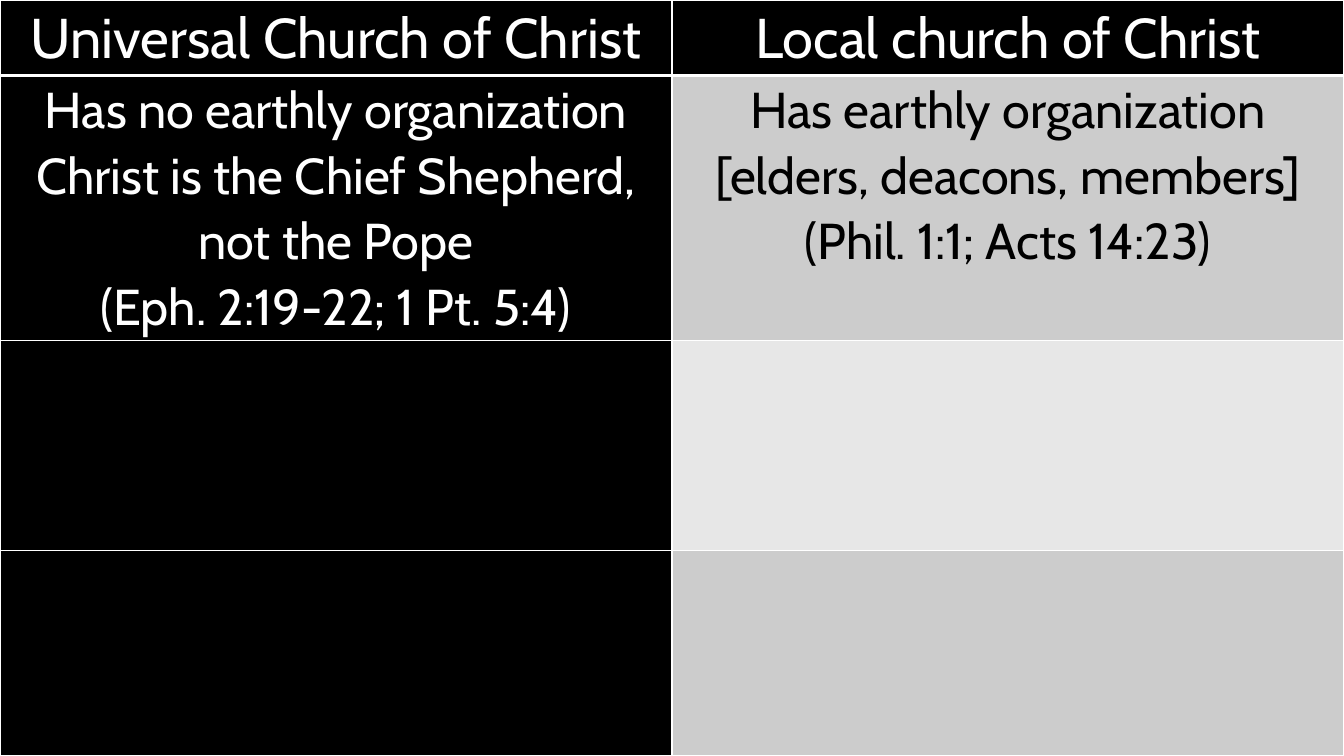
import dataclasses

import pptx
import pptx.dml.color
import pptx.enum.text
import pptx.oxml
import pptx.oxml.ns
import pptx.util
from pptx.util import Inches


@dataclasses.dataclass(frozen=True)
class Theme:
    font: str = "Cabin"
    black: str = "000000"
    white: str = "FFFFFF"
    gray: str = "CCCCCC"
    light_gray: str = "E7E7E7"
    heading_size: int = 40
    body_size: int = 36
    line_spacing: float = 1.07
    thin_border: int = 1
    heading_border: int = 3


THEME = Theme()
ROW_HEIGHTS = (0.75, 2.63, 2.09, 2.04)
RIGHT_FILLS = (THEME.black, THEME.gray, THEME.light_gray, THEME.gray)
COMPARISON = (
    (["Universal Church of Christ"], ["Local church of Christ"]),
    (
        [
            "Has no earthly organization Christ is the Chief Shepherd, not the Pope",
            "(Eph. 2:19-22; 1 Pt. 5:4)",
        ],
        [
            "Has earthly organization",
            "[elders, deacons, members]",
            "(Phil. 1:1; Acts 14:23)",
        ],
    ),
    ([], []),
    ([], []),
)


def color(value):
    return pptx.dml.color.RGBColor.from_string(value)


def set_borders(cell, widths):
    properties = cell._tc.get_or_add_tcPr()
    for index, (side, width) in enumerate(widths.items()):
        border = pptx.oxml.parse_xml(
            f'<a:ln{side} {pptx.oxml.ns.nsdecls("a")} w="{int(pptx.util.Pt(width))}">'
            f'<a:solidFill><a:srgbClr val="{THEME.white}"/></a:solidFill>'
            f"</a:ln{side}>"
        )
        properties.insert(index, border)


def fill_cell(cell, lines, background, text_color, size):
    cell.fill.solid()
    cell.fill.fore_color.rgb = color(background)
    cell.margin_left = cell.margin_right = Inches(0.07)
    cell.margin_top = cell.margin_bottom = 0
    if not lines:
        return
    cell.text = "\n".join(lines)
    for paragraph in cell.text_frame.paragraphs:
        paragraph.alignment = pptx.enum.text.PP_ALIGN.CENTER
        paragraph.line_spacing = THEME.line_spacing
        paragraph.font.name = THEME.font
        paragraph.font.size = pptx.util.Pt(size)
        paragraph.font.color.rgb = color(text_color)


def add_comparison(slide, left, top, width, height):
    shape = slide.shapes.add_table(len(COMPARISON), 2, left, top, width, height)
    table = shape.table
    table.first_row = False
    table.horz_banding = False
    for column in table.columns:
        column.width = width // 2
    for row, share in zip(table.rows, ROW_HEIGHTS):
        row.height = int(height * share / sum(ROW_HEIGHTS))

    for row_index, row_texts in enumerate(COMPARISON):
        is_heading = row_index == 0
        size = THEME.heading_size if is_heading else THEME.body_size
        top_width = THEME.heading_border if row_index == 1 else THEME.thin_border
        bottom_width = THEME.heading_border if is_heading else THEME.thin_border
        widths = {
            "L": THEME.thin_border,
            "R": THEME.thin_border,
            "T": top_width,
            "B": bottom_width,
        }
        backgrounds = (THEME.black, RIGHT_FILLS[row_index])
        for column_index, lines in enumerate(row_texts):
            cell = table.cell(row_index, column_index)
            background = backgrounds[column_index]
            text_color = THEME.white if background == THEME.black else THEME.black
            fill_cell(cell, lines, background, text_color, size)
            set_borders(cell, widths)


def main():
    presentation = pptx.Presentation()
    presentation.slide_width = Inches(13.33)
    presentation.slide_height = Inches(7.5)
    slide = presentation.slides.add_slide(presentation.slide_layouts[6])
    slide.background.fill.solid()
    slide.background.fill.fore_color.rgb = color(THEME.black)
    add_comparison(slide, 0, 0, presentation.slide_width, presentation.slide_height)
    presentation.save("out.pptx")


if __name__ == "__main__":
    main()
